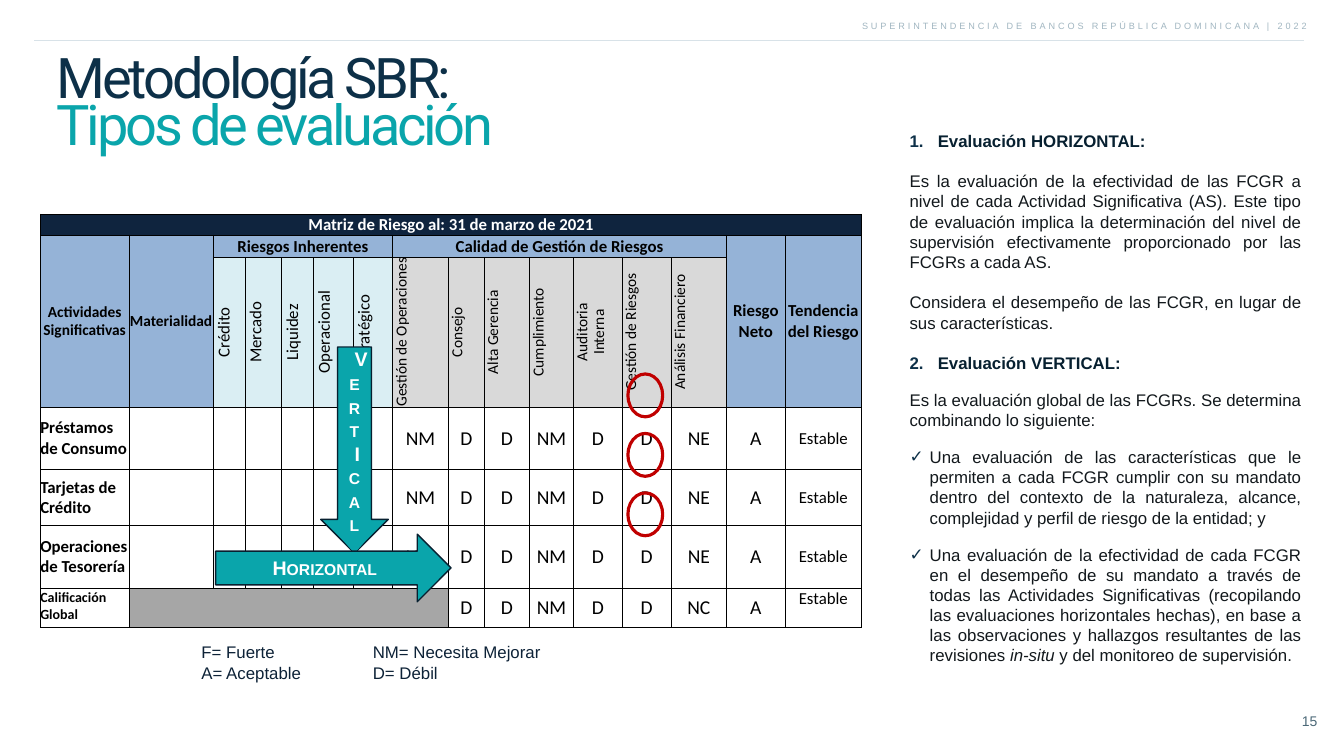
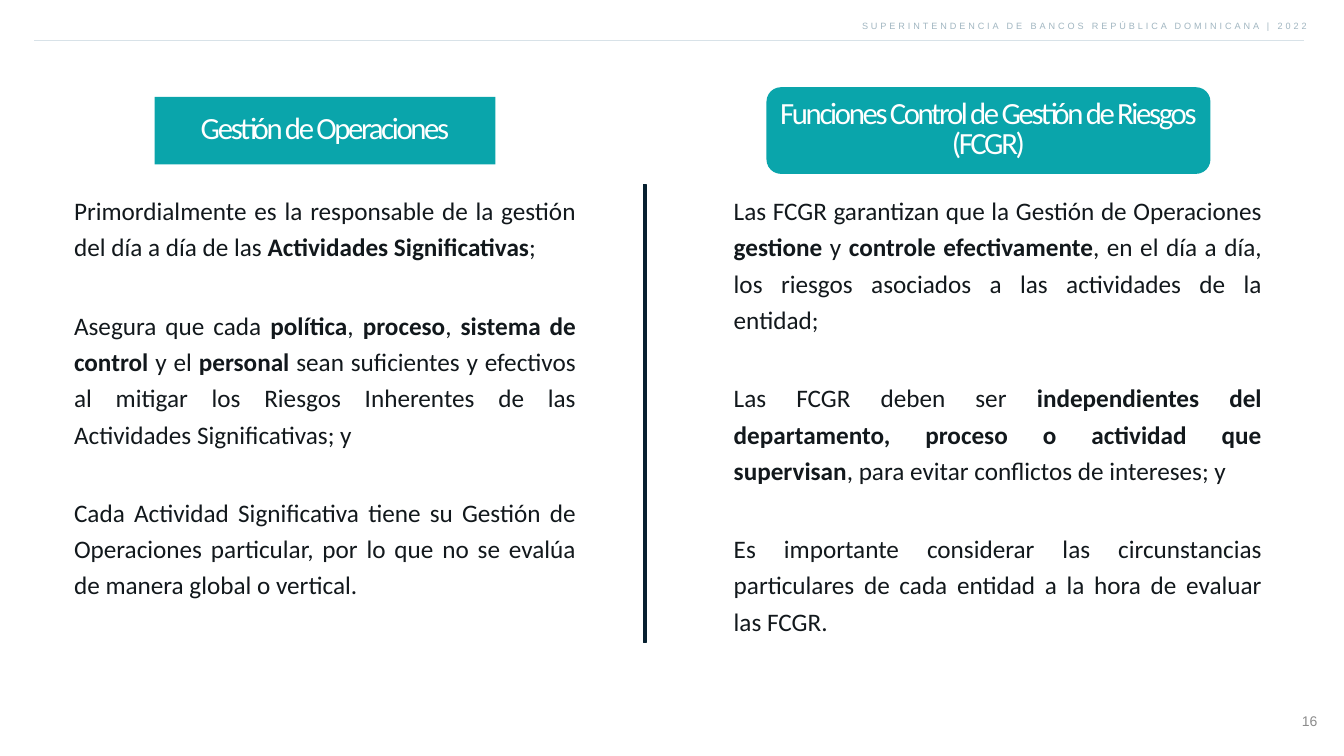
from lxml.etree import SubElement
from pptx import Presentation
from pptx.dml.color import RGBColor
from pptx.enum.shapes import MSO_CONNECTOR, MSO_SHAPE
from pptx.enum.text import MSO_ANCHOR, MSO_AUTO_SIZE, PP_ALIGN
from pptx.oxml.ns import qn
from pptx.util import Inches, Pt

COLORS = {
    "navy": "0D3048", "dark": "072030", "teal": "0AA5AB", "ink": "12181C",
    "legend": "0D2237", "footer": "A1B6C1", "rule": "D8E2E8", "white": "FFFFFF",
    "black": "000000", "red": "C00000", "page": "4C6978", "page_gray": "8C8C8C",
    "head": "0F243E", "blue": "95B3D7", "pale": "DAEEF3", "gray": "D9D9D9",
    "mid_gray": "A6A6A6",
}
ALIGN = {"l": PP_ALIGN.LEFT, "c": PP_ALIGN.CENTER, "r": PP_ALIGN.RIGHT,
         "j": PP_ALIGN.JUSTIFY}


def rgb(name):
    return RGBColor.from_string(COLORS[name])


class Deck:
    """Holds the presentation style and the current slide."""

    def __init__(self):
        self.prs = Presentation()
        self.prs.slide_width, self.prs.slide_height = Inches(26.67), Inches(15)
        self.s = None

    def slide(self, number, number_color):
        self.s = self.prs.slides.add_slide(self.prs.slide_layouts[6])
        self.text(16.84, 0.3, 9.19, 0.64,
                  ["SUPERINTENDENCIA DE BANCOS REPÚBLICA DOMINICANA | 2022"],
                  wrap=False, size=13, color="footer", align="r", spc=4.2)
        self.line(0.68, 0.8, 25.88, 0.8, "rule", 0.75)
        self.text(25.5, 14.03, 0.74, 0.52, [str(number)],
                  size=20, color=number_color, align="r")

    def fill_frame(self, tf, paras, **base):
        """Write paragraphs; parts between asterisks take the emphasis format."""
        for i, item in enumerate(paras):
            text, own = item if isinstance(item, tuple) else (item, {})
            f = {"font": "Arial", "size": 24, "color": "ink", "align": "l",
                 "emphasis": "bold", **base, **own}
            p = tf.paragraphs[0] if i == 0 else tf.add_paragraph()
            if "bullet" in f:
                self.bullet(p, f["bullet"], f["indent"])
            p.alignment = ALIGN[f["align"]]
            for attr in ("line_spacing", "space_before"):
                if attr in f and not (i == 0 and attr == "space_before"):
                    setattr(p, attr, f[attr])
            for j, part in enumerate(text.split("*")):
                r = p.add_run()
                r.text = part
                values = {"name": f["font"], "size": Pt(f["size"]),
                          "bold": f.get("bold", False)}
                if j % 2:
                    values[f["emphasis"]] = True
                for attr, value in values.items():
                    setattr(r.font, attr, value)
                r.font.color.rgb = rgb(f["color"])
                rPr = r.font._element
                if "spc" in f:
                    rPr.set("spc", str(round(f["spc"] * 100)))
                if f.get("small_caps"):
                    rPr.set("cap", "small")

    def bullet(self, p, mark, indent):
        pPr = p._p.get_or_add_pPr()
        pPr.set("marL", str(Inches(indent)))
        pPr.set("indent", str(-Inches(indent)))
        SubElement(SubElement(pPr, qn("a:buClr")), qn("a:srgbClr"),
                   val=COLORS["navy"])
        SubElement(pPr, qn("a:buFont"), typeface="Arial")
        if isinstance(mark, int):
            SubElement(pPr, qn("a:buAutoNum"), type="arabicPeriod",
                       startAt=str(mark))
        else:
            SubElement(pPr, qn("a:buChar"), char=mark)

    def frame(self, tf, inset, top, wrap=True):
        tf.word_wrap = wrap
        if not wrap:
            tf.auto_size = MSO_AUTO_SIZE.SHAPE_TO_FIT_TEXT
        for side in ("left", "right", "bottom"):
            setattr(tf, "margin_" + side, Inches(inset))
        tf.margin_top = Inches(inset if top is None else top)

    def text(self, x, y, w, h, paras, inset=0.1, top=None, wrap=True, **fmt):
        sp = self.s.shapes.add_textbox(Inches(x), Inches(y), Inches(w), Inches(h))
        self.frame(sp.text_frame, inset, top, wrap)
        self.fill_frame(sp.text_frame, paras, **fmt)

    def shape(self, kind, x, y, w, h, fill=None, line=None, width=2, paras=(),
              inset=0.1, rotation=0, adjust=(), **fmt):
        sp = self.s.shapes.add_shape(kind, Inches(x), Inches(y), Inches(w), Inches(h))
        sp.shadow.inherit = False
        sp.rotation = rotation
        for i, value in enumerate(adjust):
            sp.adjustments[i] = value
        if fill:
            sp.fill.solid()
            sp.fill.fore_color.rgb = rgb(fill)
        else:
            sp.fill.background()
        if line:
            sp.line.color.rgb = rgb(line)
            sp.line.width = Pt(width)
        else:
            sp.line.fill.background()
        if paras:
            tf = sp.text_frame
            self.frame(tf, inset, None)
            tf.vertical_anchor = MSO_ANCHOR.MIDDLE
            self.fill_frame(tf, paras, **{"color": "white", "align": "c", **fmt})

    def line(self, x1, y1, x2, y2, color, width):
        c = self.s.shapes.add_connector(MSO_CONNECTOR.STRAIGHT, Inches(x1),
                                        Inches(y1), Inches(x2), Inches(y2))
        c.line.color.rgb = rgb(color)
        c.line.width = Pt(width)
        SubElement(c._element.spPr, qn("a:effectLst"))

    def table(self, x, y, cols, rows):
        t = self.s.shapes.add_table(len(rows), len(cols), Inches(x), Inches(y),
                                    Inches(sum(cols)), Inches(sum(rows))).table
        t.first_row = t.horz_banding = False
        for col, w in zip(t.columns, cols):
            col.width = Inches(w)
        for row, h in zip(t.rows, rows):
            row.height = Inches(h)
        for cell in t.iter_cells():
            tcPr = cell._tc.get_or_add_tcPr()
            for side in "LRTB":
                ln = SubElement(tcPr, qn("a:ln" + side), w=str(Pt(1)))
                SubElement(SubElement(ln, qn("a:solidFill")), qn("a:srgbClr"),
                           val=COLORS["black"])
            cell.fill.background()
        return t

    def cell(self, t, row, col, text="", fill=None, span=(1, 1), vertical=False,
             anchor=MSO_ANCHOR.MIDDLE, **fmt):
        c = t.cell(row, col)
        if span != (1, 1):
            c.merge(t.cell(row + span[0] - 1, col + span[1] - 1))
        c.margin_left = c.margin_right = c.margin_bottom = 0
        c.margin_top = Inches(0.01)
        c.vertical_anchor = anchor
        if vertical:
            c._tc.get_or_add_tcPr().set("vert", "vert270")
        if fill:
            c.fill.solid()
            c.fill.fore_color.rgb = rgb(fill)
        if text:
            base = {"font": "Calibri", "color": "black", "align": "c"}
            self.fill_frame(c.text_frame, text.split("\n"), **{**base, **fmt})


def risk_matrix(d):
    cols = [1.76, 1.67, 0.63, 0.73, 0.63, 0.79, 0.78, 1.11, 0.71, 0.9, 0.87,
            0.97, 0.97, 1.1, 1.16, 1.52]
    t = d.table(0.8, 4.25, cols, [0.37, 0.45, 2.12, 1.24, 1.11, 1.25, 0.77])

    # Headings
    d.cell(t, 0, 0, "Matriz de Riesgo al: 31 de marzo de 2021", "head", (1, 16),
           anchor=MSO_ANCHOR.TOP, color="white", bold=True)
    headings = [(0, "Actividades Significativas", (2, 1), 22),
                (1, "Materialidad", (2, 1), 22),
                (2, "Riesgos Inherentes", (1, 5), 24),
                (7, "Calidad de Gestión de Riesgos", (1, 7), 24),
                (14, "Riesgo Neto", (2, 1), 24),
                (15, "Tendencia del Riesgo", (2, 1), 24)]
    for col, text, span, size in headings:
        d.cell(t, 1, col, text, "blue", span, size=size, bold=True)
    risks = ["Crédito", "Mercado", "Liquidez", "Operacional", "Estratégico"]
    for col, text in enumerate(risks, 2):
        d.cell(t, 2, col, text, "pale", vertical=True)
    functions = ["Gestión de Operaciones", "Consejo", "Alta Gerencia",
                 "Cumplimiento", "Auditoria\nInterna", "Gestión de Riesgos",
                 "Análisis Financiero"]
    for col, text in enumerate(functions, 7):
        d.cell(t, 2, col, text, "gray", vertical=True, size=22, line_spacing=0.9)

    # Ratings
    ratings = ["NM", "D", "D", "NM", "D", "D", "NE", "A"]
    activities = ["Préstamos de Consumo", "Tarjetas de Crédito",
                  "Operaciones de Tesorería"]
    for row, name in enumerate(activities, 3):
        d.cell(t, row, 0, name, align="l", bold=True)
        for col, value in enumerate(ratings, 7):
            d.cell(t, row, col, value, "white", size=28)
        d.cell(t, row, 15, "Estable", "white")

    # Overall rating
    d.cell(t, 6, 0, "Calificación Global", anchor=MSO_ANCHOR.TOP, align="l",
           size=20, bold=True)
    d.cell(t, 6, 1, fill="mid_gray", span=(1, 7))
    for col, value in enumerate(["D", "D", "NM", "D", "D", "NC", "A"], 8):
        d.cell(t, 6, col, value, "white", size=28)
    d.cell(t, 6, 15, "Estable", "white", anchor=MSO_ANCHOR.TOP)


def evaluation_slide(d):
    d.slide(15, "page")

    # Explanation column
    head = {"indent": 0.56, "color": "dark", "bold": True}
    gap = {"space_before": Pt(29)}
    check = {"bullet": "✓", "indent": 0.4, "space_before": Pt(24)}
    d.text(18, 2.15, 7.87, 9.88, [
        ("Evaluación HORIZONTAL:", {**head, "bullet": 1}),
        ("Es la evaluación de la efectividad de las FCGR a nivel de cada Actividad "
         "Significativa (AS). Este tipo de evaluación implica la determinación del "
         "nivel de supervisión efectivamente proporcionado por las FCGRs a cada AS.",
         gap),
        ("Considera el desempeño de las FCGR, en lugar de sus características.", gap),
        ("Evaluación VERTICAL:", {**head, **gap, "bullet": 2}),
        ("Es la evaluación global de las FCGRs. Se determina combinando lo "
         "siguiente:", {"space_before": Pt(24)}),
        ("Una evaluación de las características que le permiten a cada FCGR cumplir "
         "con su mandato dentro del contexto de la naturaleza, alcance, complejidad "
         "y perfil de riesgo de la entidad; y", check),
        ("Una evaluación de la efectividad de cada FCGR en el desempeño de su mandato "
         "a través de todas las Actividades Significativas (recopilando las "
         "evaluaciones horizontales hechas), en base a las observaciones y hallazgos "
         "resultantes de las revisiones *in-situ* y del monitoreo de supervisión.",
         {**check, "emphasis": "italic"}),
    ], inset=0.05, top=0.44, align="j")

    # Legend and title
    legend = [["F= Fuerte", "A= Aceptable"], ["NM= Necesita Mejorar", "D= Débil"]]
    for i, lines in enumerate(legend):
        d.text(3.9 + 3.4 * i, 12.64, 3.68, 1.01, lines, color="legend")
    d.text(1.03, 1.1, 12.82, 2.11,
           [("Metodología SBR:", {"color": "navy"}), "Tipos de evaluación"],
           font="Roboto", size=80, color="teal", spc=-4.7, line_spacing=0.7)

    risk_matrix(d)

    # Rings and direction arrows
    for i in range(3):
        d.shape(MSO_SHAPE.OVAL, 12.46, 7.42 + 1.18 * i, 0.69, 0.85,
                line="red", width=4.5)
    label = {"size": 28, "bold": True, "small_caps": True}
    d.shape(MSO_SHAPE.RIGHT_ARROW, 4.99, 8.26, 4.09, 1.34, "teal", "dark",
            rotation=90)
    d.shape(MSO_SHAPE.DOWN_ARROW, 6.69, 6.9, 0.69, 4.08, "teal",
            paras=list("VertIcal"), adjust=(0.913, 0.571), **label)
    d.shape(MSO_SHAPE.RIGHT_ARROW, 4.28, 10.6, 4.67, 1.34, "teal", "dark",
            paras=["Horizontal"], **label)


def comparison_slide(d):
    d.slide(16, "page_gray")
    columns = [
        (MSO_SHAPE.RECTANGLE, (3.07, 1.92, 6.76, 1.34), ["Gestión de Operaciones"],
         (1.42, 3.71, 10.06, 8.31),
         ["Primordialmente es la responsable de la gestión del día a día de las "
          "*Actividades Significativas*;",
          "Asegura que cada *política*, *proceso*, *sistema de control* y el "
          "*personal* sean suficientes y efectivos al mitigar los Riesgos Inherentes "
          "de las Actividades Significativas; y",
          "Cada Actividad Significativa tiene su Gestión de Operaciones particular, "
          "por lo que no se evalúa de manera global o vertical."]),
        (MSO_SHAPE.ROUNDED_RECTANGLE, (15.21, 1.73, 8.81, 1.72),
         ["Funciones Control de Gestión de Riesgos", "(FCGR)"],
         (14.51, 3.71, 10.58, 9.47),
         ["Las FCGR garantizan que la Gestión de Operaciones *gestione* y *controle "
          "efectivamente*, en el día a día, los riesgos asociados a las actividades "
          "de la entidad;",
          "Las FCGR deben ser *independientes del departamento, proceso o actividad "
          "que supervisan*, para evitar conflictos de intereses; y",
          "Es importante considerar las circunstancias particulares de cada entidad "
          "a la hora de evaluar las FCGR."]),
    ]
    for kind, head_box, head, body_box, body in columns:
        d.shape(kind, *head_box, fill="teal", paras=head, inset=0.05, font="Calibri",
                size=44, spc=-3.4, line_spacing=0.8)
        d.text(*body_box, body, inset=0.05, font="Calibri", size=36,
               align="j", line_spacing=1.2, space_before=Pt(60))

    # Divider
    d.shape(MSO_SHAPE.RECTANGLE, 12.77, 3.66, 0.05, 9.09, "dark", "dark")


def main():
    d = Deck()
    evaluation_slide(d)
    comparison_slide(d)
    d.prs.save("out.pptx")


if __name__ == "__main__":
    main()
